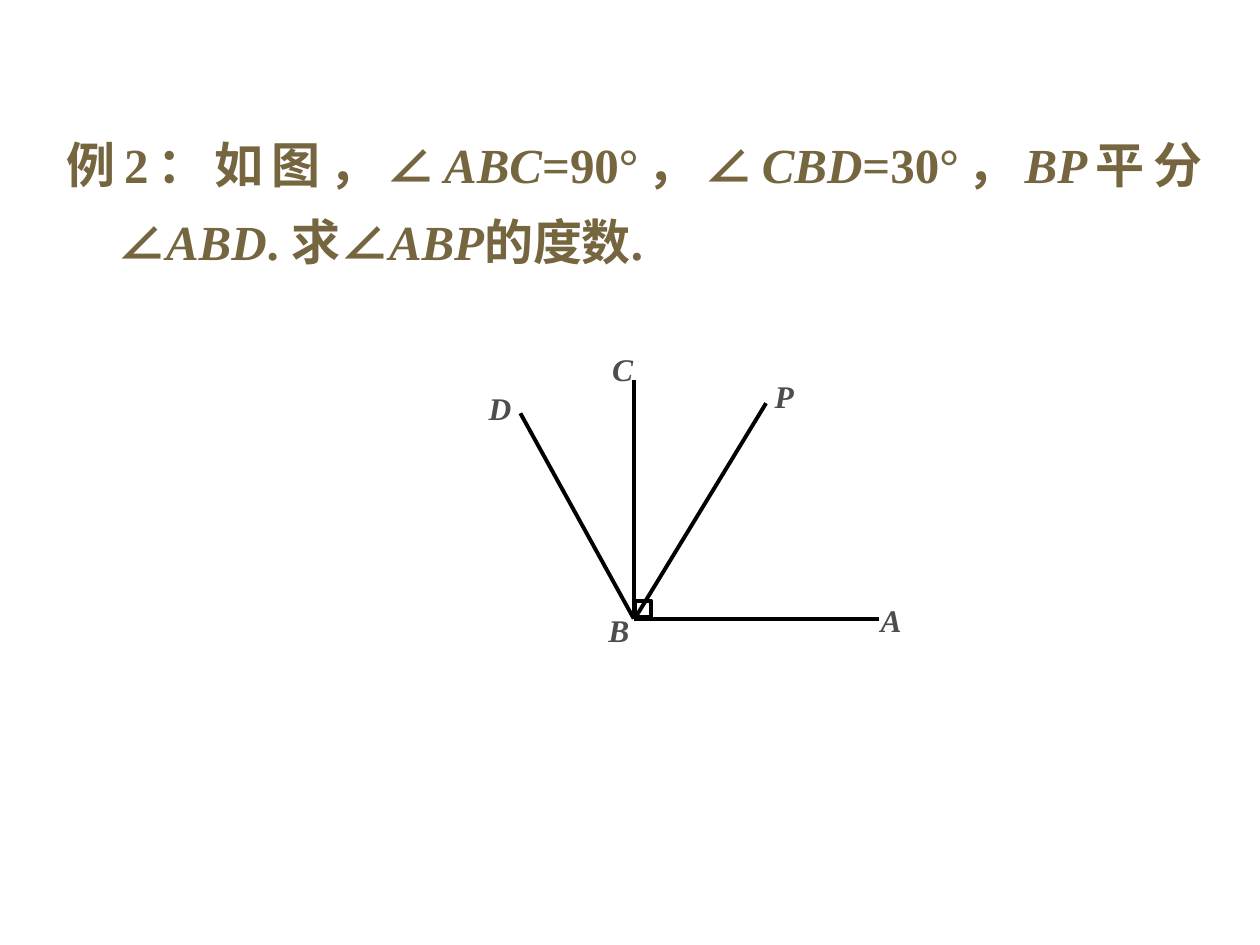
from lxml import etree
from pptx import Presentation
from pptx.dml.color import RGBColor
from pptx.enum.shapes import MSO_CONNECTOR, MSO_SHAPE
from pptx.enum.text import MSO_AUTO_SIZE, PP_ALIGN
from pptx.oxml.ns import qn
from pptx.util import Inches, Pt

STRAIGHT = MSO_CONNECTOR.STRAIGHT
RECTANGLE = MSO_SHAPE.RECTANGLE
NO_AUTOFIT = MSO_AUTO_SIZE.NONE
JUSTIFY = PP_ALIGN.JUSTIFY

FONT = "Times New Roman"
BROWN, GREY, BLACK = "766640", "4D4D4D", "000000"
STROKE = Pt(2.25)
COLUMNS = 37  # square grid cells across the figure

# Upright and italic pieces alternate
PROBLEM = ["例2：如图，∠", "ABC", "=90°，∠", "CBD", "=30°，", "BP",
           "平分∠", "ABD", ". 求∠", "ABP", "的度数."]

# Start and end of each ray, in grid cells
VERTEX = (12.8, 22.1)
RAYS = {
    "BC": (VERTEX, (12.8, 3.2)),
    "BA": (VERTEX, (32.3, 22.1)),
    "BD": (VERTEX, (3.8, 5.8)),
    "BP": ((13, 21.9), (23.3, 5)),
}
# Column, row, width and height of each point label, in grid cells
POINTS = {
    "A": (31.4, 20.2, 5.6, 6),
    "B": (9.8, 21, 6.6, 5.8),
    "C": (10.1, 0.3, 7.5, 5.8),
    "D": (0.3, 3.4, 6.3, 5),
    "P": (23, 2.4, 4.8, 5.3),
}
RIGHT_ANGLE = (12.9, 20.7, 1.3, 1.3)


def colour(value):
    return RGBColor.from_string(value)


def style_font(font, size, value, italic):
    font.name = FONT
    font.size = Pt(size)
    font.bold = True
    font.italic = italic
    font.color.rgb = colour(value)


def add_problem(slide, left, top, width, height):
    """Problem statement in the body placeholder, with a hanging indent."""
    body = slide.placeholders[1]
    body.left, body.top, body.width, body.height = left, top, width, height
    body.text_frame.auto_size = NO_AUTOFIT
    statement = body.text_frame.paragraphs[0]
    statement.alignment = JUSTIFY
    statement.line_spacing = 1.3
    statement.space_before = Pt(0)
    properties = statement._p.get_or_add_pPr()
    properties.set("marL", str(Inches(0.4)))
    properties.set("indent", str(-Inches(0.4)))
    etree.SubElement(properties, qn("a:buNone"))
    for index, piece in enumerate(PROBLEM):
        run = statement.add_run()
        run.text = piece
        style_font(run.font, 28, BROWN, italic=index % 2 == 1)


def add_figure(slide, left, top, width):
    """Rays from B with their labels, on a square grid."""
    cell = width / COLUMNS
    figure = slide.shapes.add_group_shape().shapes

    def spot(column, row):
        return round(left + column * cell), round(top + row * cell)

    def area(column, row, columns, rows):
        return *spot(column, row), round(columns * cell), round(rows * cell)

    # Point labels
    for point, place in POINTS.items():
        frame = figure.add_textbox(*area(*place)).text_frame
        frame.word_wrap = True
        frame.text = point
        label = frame.paragraphs[0]
        label.alignment = JUSTIFY
        style_font(label.runs[0].font, 18, GREY, italic=True)

    # Rays
    for start, end in RAYS.values():
        ray = figure.add_connector(STRAIGHT, *spot(*start), *spot(*end))
        ray.line.color.rgb = colour(BLACK)
        ray.line.width = STROKE
        etree.SubElement(ray._element.spPr, qn("a:effectLst"))

    # Right angle mark
    mark = figure.add_shape(RECTANGLE, *area(*RIGHT_ANGLE))
    mark.shadow.inherit = False
    mark.fill.background()
    mark.line.color.rgb = colour(BLACK)
    mark.line.width = STROKE


def main():
    deck = Presentation()
    deck.slide_width, deck.slide_height = Inches(10), Inches(7.5)
    slide = deck.slides.add_slide(deck.slide_layouts[1])
    title = slide.shapes.title._element
    title.getparent().remove(title)
    add_problem(slide, Inches(0.43), Inches(0.88), Inches(9.21), Inches(1.41))
    add_figure(slide, Inches(3.75), Inches(2.7), Inches(3.7))
    deck.save("out.pptx")


if __name__ == "__main__":
    main()
